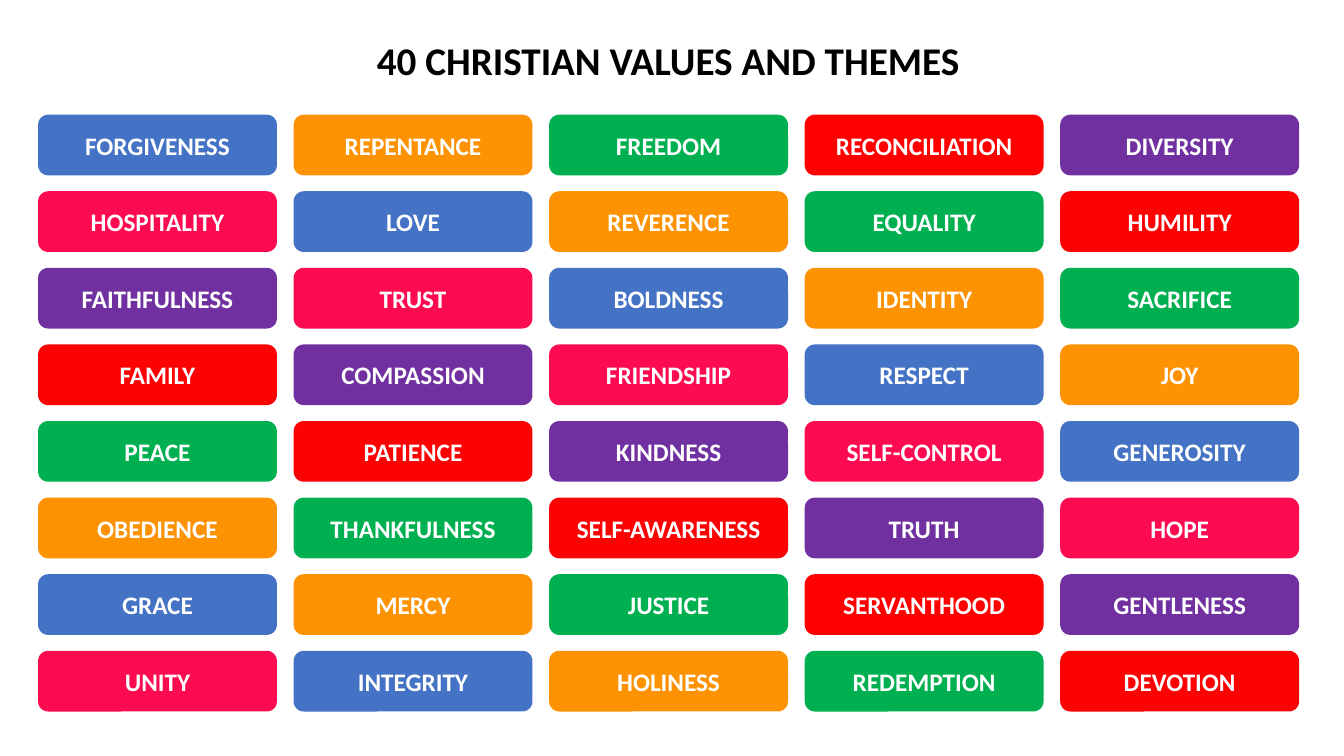
"""Build a one-slide grid of forty Christian values and themes."""
from dataclasses import dataclass

from pptx import Presentation
from pptx.dml.color import RGBColor
from pptx.enum.shapes import MSO_SHAPE as Shape
from pptx.enum.text import MSO_ANCHOR as Anchor, MSO_AUTO_SIZE as AutoSize, PP_ALIGN as Align
from pptx.util import Cm, Pt

TITLE = "40 CHRISTIAN VALUES AND THEMES"
VALUES = [
    ("FORGIVENESS", "REPENTANCE", "FREEDOM", "RECONCILIATION", "DIVERSITY"),
    ("HOSPITALITY", "LOVE", "REVERENCE", "EQUALITY", "HUMILITY"),
    ("FAITHFULNESS", "TRUST", "BOLDNESS", "IDENTITY", "SACRIFICE"),
    ("FAMILY", "COMPASSION", "FRIENDSHIP", "RESPECT", "JOY"),
    ("PEACE", "PATIENCE", "KINDNESS", "SELF-CONTROL", "GENEROSITY"),
    ("OBEDIENCE", "THANKFULNESS", "SELF-AWARENESS", "TRUTH", "HOPE"),
    ("GRACE", "MERCY", "JUSTICE", "SERVANTHOOD", "GENTLENESS"),
    ("UNITY", "INTEGRITY", "HOLINESS", "REDEMPTION", "DEVOTION"),
]


@dataclass(frozen=True)
class Theme:
    font: str = "Calibri"
    title_size: int = 28
    value_size: int = 18
    title_color: str = "000000"
    value_color: str = "FFFFFF"
    red: str = "FB0303"
    bright_red: str = "FF0000"
    cycle: tuple = ("4472C4", "FD9203", "00B050", "FB0303", "7030A0", "FD0B50")


THEME = Theme()
GRID_LEFT, GRID_TOP = 0.96, 2.89
COLUMN_STEP, ROW_STEP = 6.44, 1.93
TILE_WIDTH, TILE_HEIGHT = 6.02, 1.53


def write(frame, text, size, color, align):
    para = frame.paragraphs[0]
    para.text = text
    para.alignment = align
    para.font.name = THEME.font
    para.font.size = Pt(size)
    para.font.bold = True
    para.font.color.rgb = RGBColor.from_string(color)


def tile_color(row, column):
    color = THEME.cycle[(column - row) % len(THEME.cycle)]
    starts_cycle = row % len(THEME.cycle) == 0
    return THEME.bright_red if starts_cycle and color == THEME.red else color


def add_tile(page, row, column, value):
    tile = page.shapes.add_shape(
        Shape.ROUNDED_RECTANGLE,
        Cm(GRID_LEFT + column * COLUMN_STEP), Cm(GRID_TOP + row * ROW_STEP),
        Cm(TILE_WIDTH), Cm(TILE_HEIGHT),
    )
    tile.shadow.inherit = False
    tile.fill.solid()
    tile.fill.fore_color.rgb = RGBColor.from_string(tile_color(row, column))
    tile.line.fill.background()
    tile.text_frame.vertical_anchor = Anchor.MIDDLE
    write(tile.text_frame, value, THEME.value_size, THEME.value_color, Align.CENTER)


def add_title(page):
    box = page.shapes.add_textbox(Cm(9.25), Cm(0.79), Cm(15.37), Cm(1.45))
    box.text_frame.word_wrap = False
    box.text_frame.auto_size = AutoSize.SHAPE_TO_FIT_TEXT
    write(box.text_frame, TITLE, THEME.title_size, THEME.title_color, Align.LEFT)


def main():
    deck = Presentation()
    deck.slide_width, deck.slide_height = Cm(33.87), Cm(19.05)
    page = deck.slides.add_slide(deck.slide_layouts[6])
    for row, values in enumerate(VALUES):
        for column, value in enumerate(values):
            add_tile(page, row, column, value)
    add_title(page)
    deck.save("out.pptx")


if __name__ == "__main__":
    main()
